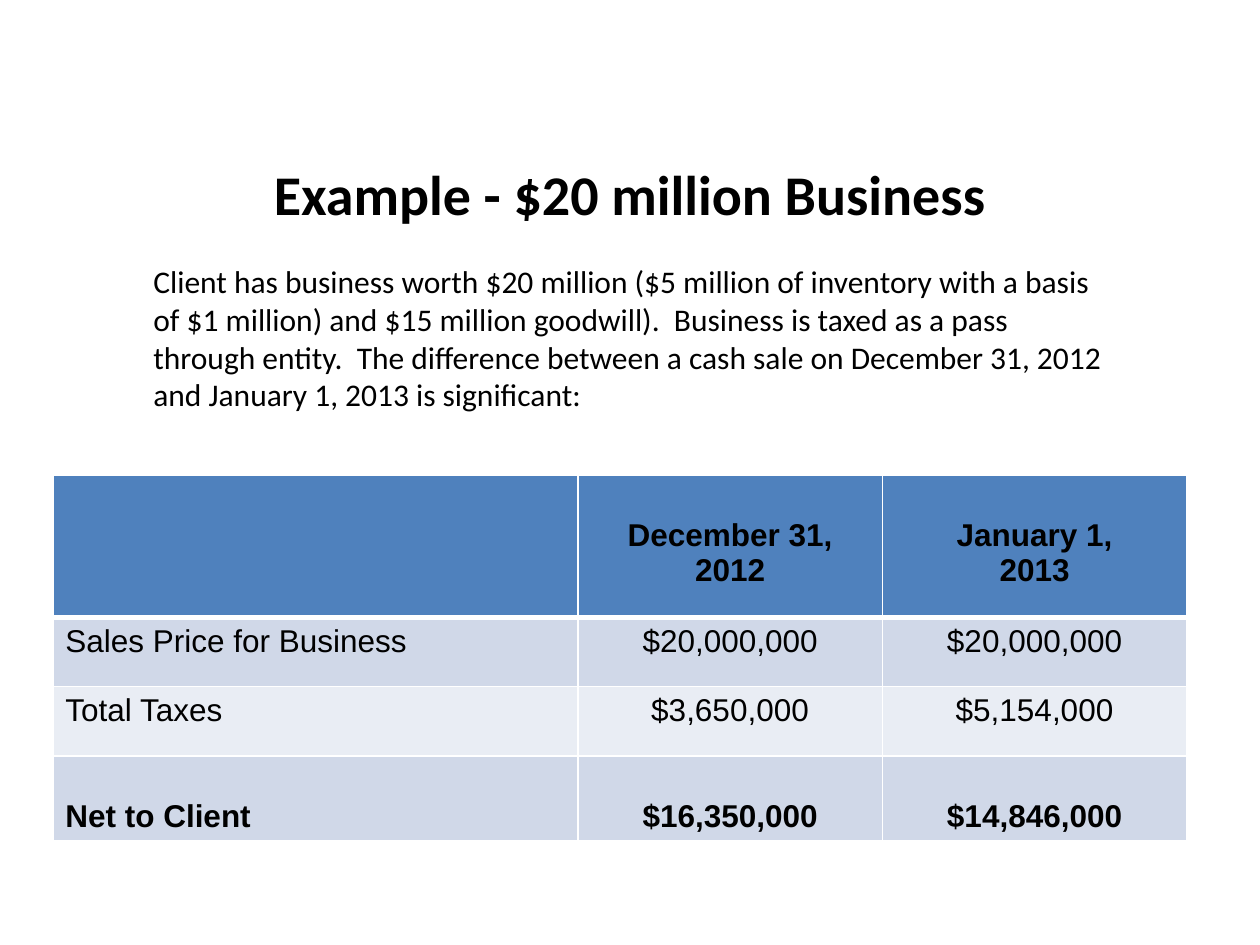
from typing import NamedTuple

from lxml import etree
from pptx import Presentation
from pptx.dml.color import RGBColor
from pptx.enum import text as t
from pptx.oxml import ns
from pptx.util import Pt

BLACK = RGBColor(0x00, 0x00, 0x00)
WHITE = RGBColor(0xFF, 0xFF, 0xFF)
BLUE = RGBColor(0x4F, 0x81, 0xBD)
DARK = RGBColor(0xD0, 0xD8, 0xE8)
LIGHT = RGBColor(0xE9, 0xED, 0xF4)

PAD = 3.6
DROP = PAD + 20.7  # one text line below the usual top margin
THIN, THICK = 1, 3
WIDTHS = (300, 174, 174)

INTRO = (
    "Client has business worth $20 million ($5 million of inventory with a basis "
    "of $1 million) and $15 million goodwill).  Business is taxed as a pass through "
    "entity.  The difference between a cash sale on December 31, 2012 and "
    "January 1, 2013 is significant:"
)


class Row(NamedTuple):
    height: float
    top: float
    fill: RGBColor
    bold: bool
    cells: tuple[str, str, str]


ROWS = (
    Row(81.2, DROP, BLUE, True, ("", "December 31, 2012", "January 1,\n2013")),
    Row(39.6, PAD, DARK, False, ("Sales Price for Business", "$20,000,000", "$20,000,000")),
    Row(39.6, PAD, LIGHT, False, ("Total Taxes", "$3,650,000", "$5,154,000")),
    Row(48.6, DROP, DARK, True, ("Net to Client", "$16,350,000", "$14,846,000")),
)


def style(frame, font: str, size: float, bold: bool, align) -> None:
    for par in frame.paragraphs:
        par.alignment = align
        for run in par.runs:
            run.font.name = font
            run.font.size = Pt(size)
            run.font.bold = bold
            run.font.color.rgb = BLACK


def edge(cell, top: float, base: float) -> None:
    """Draw white borders with the given top and bottom line widths."""
    props = cell._tc.get_or_add_tcPr()
    sides = (("lnL", THIN), ("lnR", THIN), ("lnT", top), ("lnB", base))
    for i, (tag, width) in enumerate(sides):
        line = etree.Element(ns.qn(f"a:{tag}"), w=str(Pt(width)))
        fill = etree.SubElement(line, ns.qn("a:solidFill"))
        etree.SubElement(fill, ns.qn("a:srgbClr"), val=str(WHITE))
        props.insert(i, line)


def add_grid(slide, left: float, top: float, rows: tuple[Row, ...]) -> None:
    high = sum(row.height for row in rows)
    table = slide.shapes.add_table(
        len(rows), len(WIDTHS), Pt(left), Pt(top), Pt(sum(WIDTHS)), Pt(high)
    ).table
    for col, width in zip(table.columns, WIDTHS):
        col.width = Pt(width)
    for r, row in enumerate(rows):
        table.rows[r].height = Pt(row.height)
        for c, words in enumerate(row.cells):
            cell = table.cell(r, c)
            cell.text_frame.text = words
            cell.margin_top = Pt(row.top)
            cell.fill.solid()
            cell.fill.fore_color.rgb = row.fill
            edge(cell, THICK if r == 1 else THIN, THICK if r == 0 else THIN)
            align = t.PP_ALIGN.CENTER if c else t.PP_ALIGN.LEFT
            style(cell.text_frame, "Arial", 18, row.bold, align)


def main() -> None:
    deck = Presentation()
    deck.slide_width, deck.slide_height = Pt(720), Pt(540)
    slide = deck.slides.add_slide(deck.slide_layouts[5])

    title = slide.shapes.title
    title.left, title.top, title.width, title.height = Pt(36), Pt(65.5), Pt(648), Pt(90)
    title.text_frame.text = "Example - $20 million Business"
    title.text_frame.vertical_anchor = t.MSO_ANCHOR.MIDDLE
    style(title.text_frame, "Calibri", 32, True, t.PP_ALIGN.CENTER)

    add_grid(slide, 30.2, 271.6, ROWS)

    intro = slide.shapes.add_textbox(Pt(80.6), Pt(146.2), Pt(563.8), Pt(94.3))
    intro.text_frame.word_wrap = True
    intro.text_frame.text = INTRO
    style(intro.text_frame, "Calibri", 18, False, t.PP_ALIGN.LEFT)

    deck.save("out.pptx")


if __name__ == "__main__":
    main()
